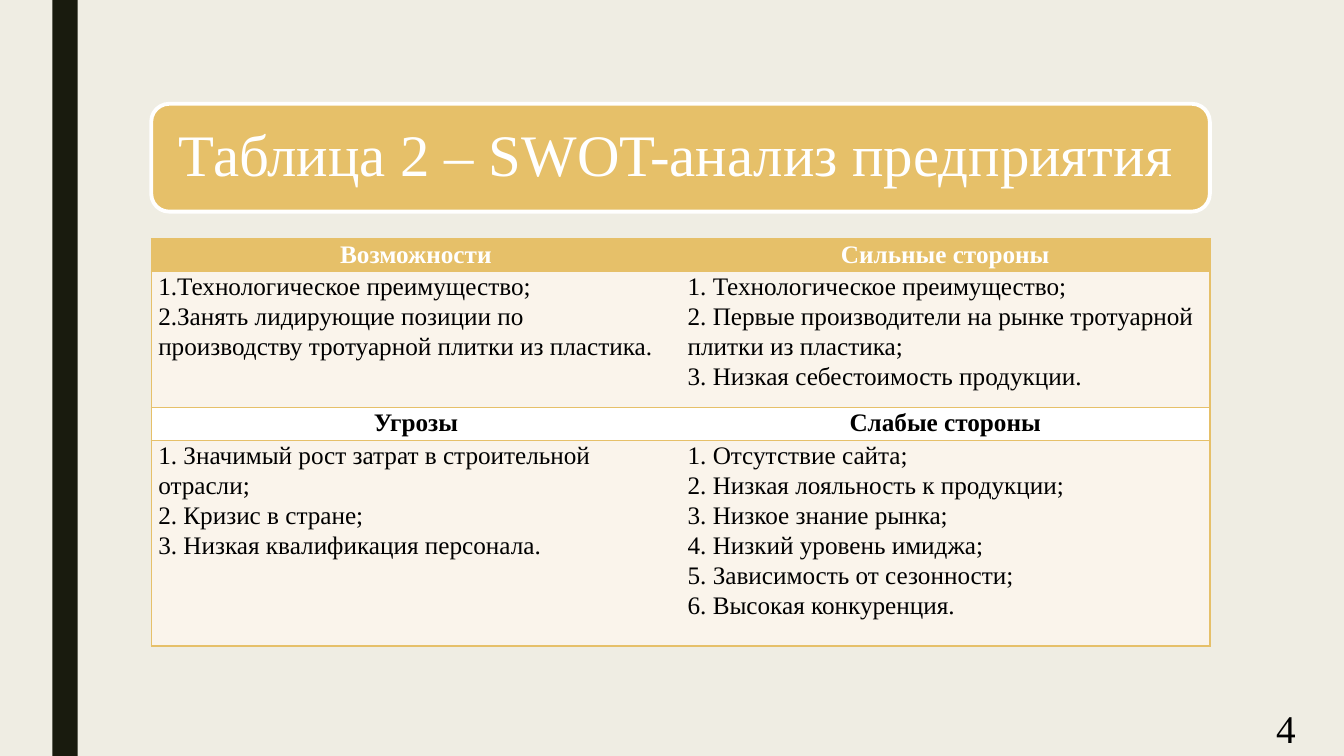
from lxml.etree import SubElement
from pptx import Presentation
from pptx.dml.color import RGBColor
from pptx.enum.shapes import MSO_SHAPE
from pptx.enum.text import MSO_ANCHOR, PP_ALIGN
from pptx.oxml.ns import qn
from pptx.util import Inches, Pt

FONT = "Times New Roman"
GOLD, CREAM, WHITE, BLACK = "E6C069", "FAF4EB", "FFFFFF", "000000"

SWOT = [
    (["Возможности"], ["Сильные стороны"]),
    (
        [
            "1.Технологическое преимущество;",
            "2.Занять лидирующие позиции по производству тротуарной плитки из пластика.",
        ],
        [
            "1. Технологическое преимущество;",
            "2. Первые производители на рынке тротуарной плитки из пластика;",
            "3. Низкая себестоимость продукции.",
        ],
    ),
    (["Угрозы"], ["Слабые стороны"]),
    (
        [
            "1. Значимый рост затрат в строительной отрасли;",
            "2. Кризис в стране;",
            "3. Низкая квалификация персонала.",
        ],
        [
            "1. Отсутствие сайта;",
            "2. Низкая лояльность к продукции;",
            "3. Низкое знание рынка;",
            "4. Низкий уровень имиджа;",
            "5. Зависимость от сезонности;",
            "6. Высокая конкуренция.",
        ],
    ),
]
ROW_HEIGHTS = [0.32, 1.35, 0.33, 2.04]
ROW_STYLES = [
    (GOLD, WHITE, True),
    (CREAM, BLACK, False),
    (WHITE, BLACK, True),
    (CREAM, BLACK, False),
]


def color(value):
    return RGBColor.from_string(value)


def write(frame, lines, size=18, ink=BLACK, bold=False, align=PP_ALIGN.LEFT, spacing=1.0):
    frame.word_wrap = True
    for index, line in enumerate(lines):
        paragraph = frame.paragraphs[0] if index == 0 else frame.add_paragraph()
        paragraph.alignment = align
        paragraph.line_spacing = spacing
        run = paragraph.add_run()
        run.text = line
        run.font.name = FONT
        run.font.size = Pt(size)
        run.font.bold = bold
        run.font.color.rgb = color(ink)


def add_panel(slide, kind, box, fill):
    panel = slide.shapes.add_shape(kind, *map(Inches, box))
    panel.shadow.inherit = False
    panel.fill.solid()
    panel.fill.fore_color.rgb = color(fill)
    panel.line.fill.background()
    return panel


def add_title(slide, box):
    banner = add_panel(slide, MSO_SHAPE.ROUNDED_RECTANGLE, box, GOLD)
    banner.line.color.rgb = color(WHITE)
    banner.line.width = Pt(2.75)
    frame = banner.text_frame
    frame.margin_left = frame.margin_right = Inches(0.22)
    frame.vertical_anchor = MSO_ANCHOR.MIDDLE
    write(frame, ["Таблица 2 – SWOT-анализ предприятия"], size=42, ink=WHITE, spacing=0.9)


def set_borders(cell, visible):
    properties = cell._tc.get_or_add_tcPr()
    for side in "LRTB":
        border = SubElement(properties, qn(f"a:ln{side}"), w=str(Pt(1)))
        if side in visible:
            solid = SubElement(border, qn("a:solidFill"))
            SubElement(solid, qn("a:srgbClr"), val=GOLD)
        else:
            SubElement(border, qn("a:noFill"))


def add_swot(slide, box):
    table = slide.shapes.add_table(len(SWOT), 2, *map(Inches, box)).table
    table.first_row = table.horz_banding = False
    for column in table.columns:
        column.width = Inches(box[2] / 2)
    for row, height, texts, style in zip(table.rows, ROW_HEIGHTS, SWOT, ROW_STYLES):
        row.height = Inches(height)
        fill, ink, heading = style
        for cell, lines, outer in zip(row.cells, texts, "LR"):
            cell.margin_left = cell.margin_right = Inches(0.07)
            cell.margin_top = cell.margin_bottom = 0
            set_borders(cell, outer + "TB")
            cell.fill.solid()
            cell.fill.fore_color.rgb = color(fill)
            align = PP_ALIGN.CENTER if heading else PP_ALIGN.LEFT
            write(cell.text_frame, lines, ink=ink, bold=heading, align=align, spacing=1.07)


def add_page_number(slide, box):
    number = slide.shapes.add_textbox(*map(Inches, box))
    write(number.text_frame, ["4"], size=28, align=PP_ALIGN.CENTER)


def main():
    deck = Presentation()
    deck.slide_width, deck.slide_height = Inches(13.33), Inches(7.5)
    slide = deck.slides.add_slide(deck.slide_layouts[6])
    slide.background.fill.solid()
    slide.background.fill.fore_color.rgb = color("EFEDE3")
    add_panel(slide, MSO_SHAPE.RECTANGLE, (0.52, 0, 0.25, 7.5), "191B0E")
    add_title(slide, (1.5, 1.03, 10.5, 1.07))
    add_swot(slide, (1.5, 2.37, 10.5, sum(ROW_HEIGHTS)))
    add_page_number(slide, (12.18, 6.94, 1.15, 0.57))
    deck.save("out.pptx")


if __name__ == "__main__":
    main()
